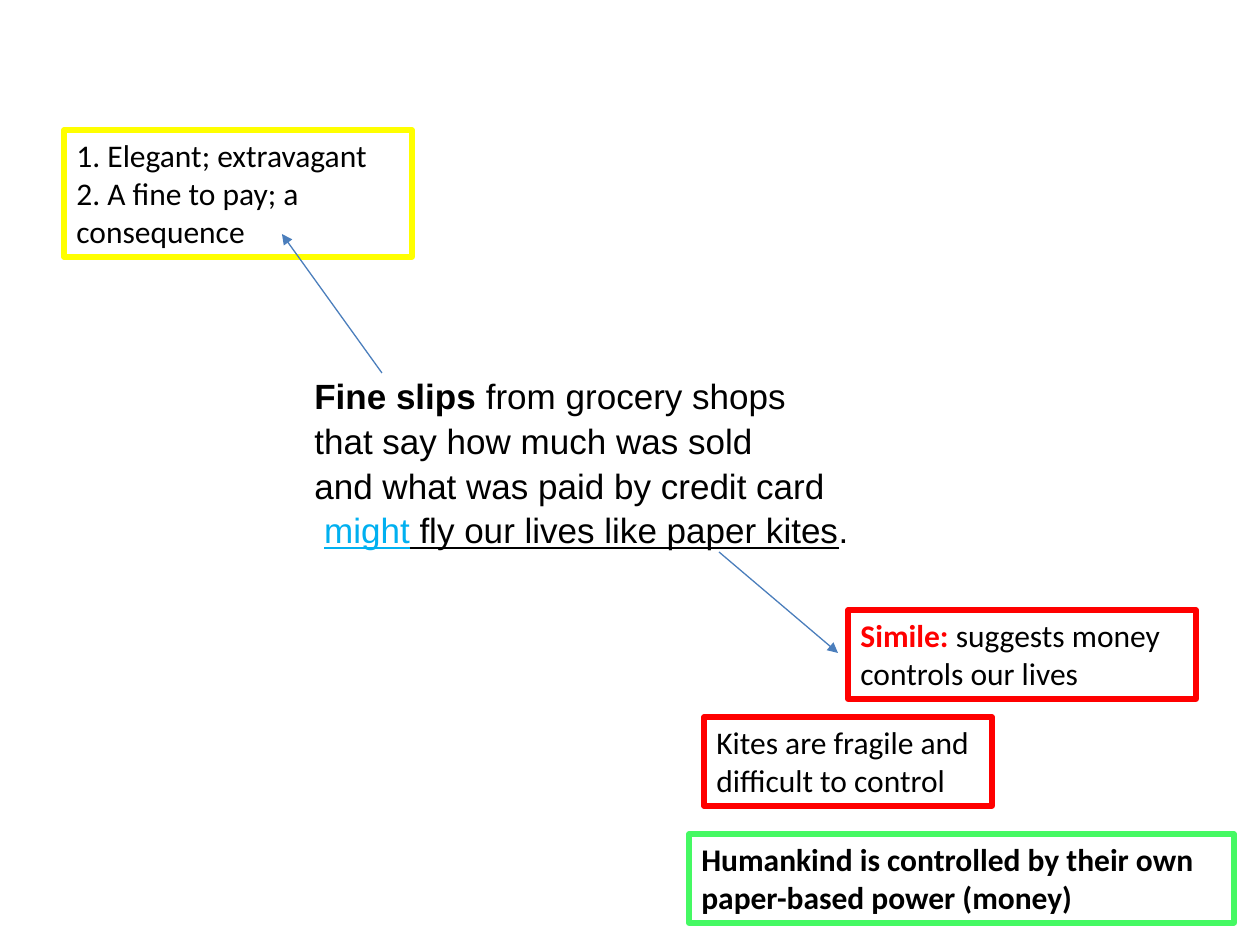
from lxml import etree
from pptx import Presentation
from pptx.dml.color import RGBColor
from pptx.enum.shapes import MSO_CONNECTOR, MSO_SHAPE
from pptx.enum.text import MSO_ANCHOR, MSO_AUTO_SIZE, PP_ALIGN
from pptx.oxml.ns import qn
from pptx.util import Emu, Pt

PX_PER_INCH = 126

BLACK = RGBColor(0x00, 0x00, 0x00)
RED = RGBColor(0xFF, 0x00, 0x00)
YELLOW = RGBColor(0xFF, 0xFF, 0x00)
GREEN = RGBColor(0x45, 0xF9, 0x63)
SKY = RGBColor(0x00, 0xB0, 0xF0)
ARROW_BLUE = RGBColor(0x4B, 0x7E, 0xBC)

NOTE = {"name": "Calibri", "size": Pt(18)}
VERSE = {"name": "Arial", "size": Pt(20)}


def px(n):
    return Emu(round(n * 914400 / PX_PER_INCH))


def add_run(p, text, color=BLACK, **font):
    """Add formatted text, turning each newline into a line break."""
    for i, line in enumerate(text.split("\n")):
        if i:
            p.add_line_break()
        r = p.add_run()
        r.text = line
        r.font.color.rgb = color
        for key, value in font.items():
            setattr(r.font, key, value)


def fill_text(tf, paragraphs, base):
    """Each paragraph is a list of (text, format) pairs."""
    settings = {"word_wrap": True, "auto_size": MSO_AUTO_SIZE.SHAPE_TO_FIT_TEXT,
                "vertical_anchor": MSO_ANCHOR.TOP}
    for key, value in settings.items():
        setattr(tf, key, value)
    for i, runs in enumerate(paragraphs):
        p = tf.add_paragraph() if i else tf.paragraphs[0]
        p.alignment = PP_ALIGN.LEFT
        for text, font in runs:
            add_run(p, text, **{**base, **font})


def add_note(s, box, border, paragraphs):
    sp = s.shapes.add_shape(MSO_SHAPE.RECTANGLE, *map(px, box))
    sp.shadow.inherit = False
    sp.fill.background()
    sp.line.color.rgb = border
    sp.line.width = Pt(3)
    fill_text(sp.text_frame, paragraphs, NOTE)


def add_verse(s, box, runs):
    tf = s.shapes.add_textbox(*map(px, box)).text_frame
    fill_text(tf, [runs], VERSE)
    p = tf.paragraphs[0]
    p.line_spacing = 1.07
    p.space_after = Pt(8)


def add_arrow(s, start, end):
    line = s.shapes.add_connector(MSO_CONNECTOR.STRAIGHT, *map(px, start + end))
    line.line.color.rgb = ARROW_BLUE
    line.line.width = Pt(0.75)
    etree.SubElement(line.line._get_or_add_ln(), qn("a:tailEnd"), type="triangle")
    etree.SubElement(line._element.spPr, qn("a:effectLst"))


def main():
    prs = Presentation()
    prs.slide_width, prs.slide_height = px(1260), px(945)
    s = prs.slides.add_slide(prs.slide_layouts[6])

    # Verse
    add_verse(s, (302, 365, 630, 194), [
        ("Fine slips ", {"bold": True}),
        ("from grocery shops\nthat say how much was sold\n"
         "and what was paid by credit card\n ", {}),
        ("might", {"color": SKY, "underline": True}),
        (" fly our lives like paper kites", {"underline": True}),
        (".", {}),
    ])

    # Notes around the verse
    add_note(s, (64, 130, 348, 127), YELLOW, [
        [("1. Elegant; extravagant", {})],
        [("2. A fine to pay; a consequence", {})],
    ])
    add_note(s, (848, 610, 348, 89), RED, [
        [("Simile: ", {"color": RED, "bold": True}),
         ("suggests money controls our lives", {})],
    ])
    add_note(s, (689, 834, 545, 89), GREEN, [
        [("Humankind is controlled by their own paper-based power (money)",
          {"bold": True})],
    ])
    add_note(s, (704, 717, 288, 89), RED, [
        [("Kites are fragile and difficult to control", {})],
    ])

    # Arrows from words to notes
    add_arrow(s, (382, 373), (282, 234))
    add_arrow(s, (719, 552), (838, 653))

    prs.save("out.pptx")


if __name__ == "__main__":
    main()
